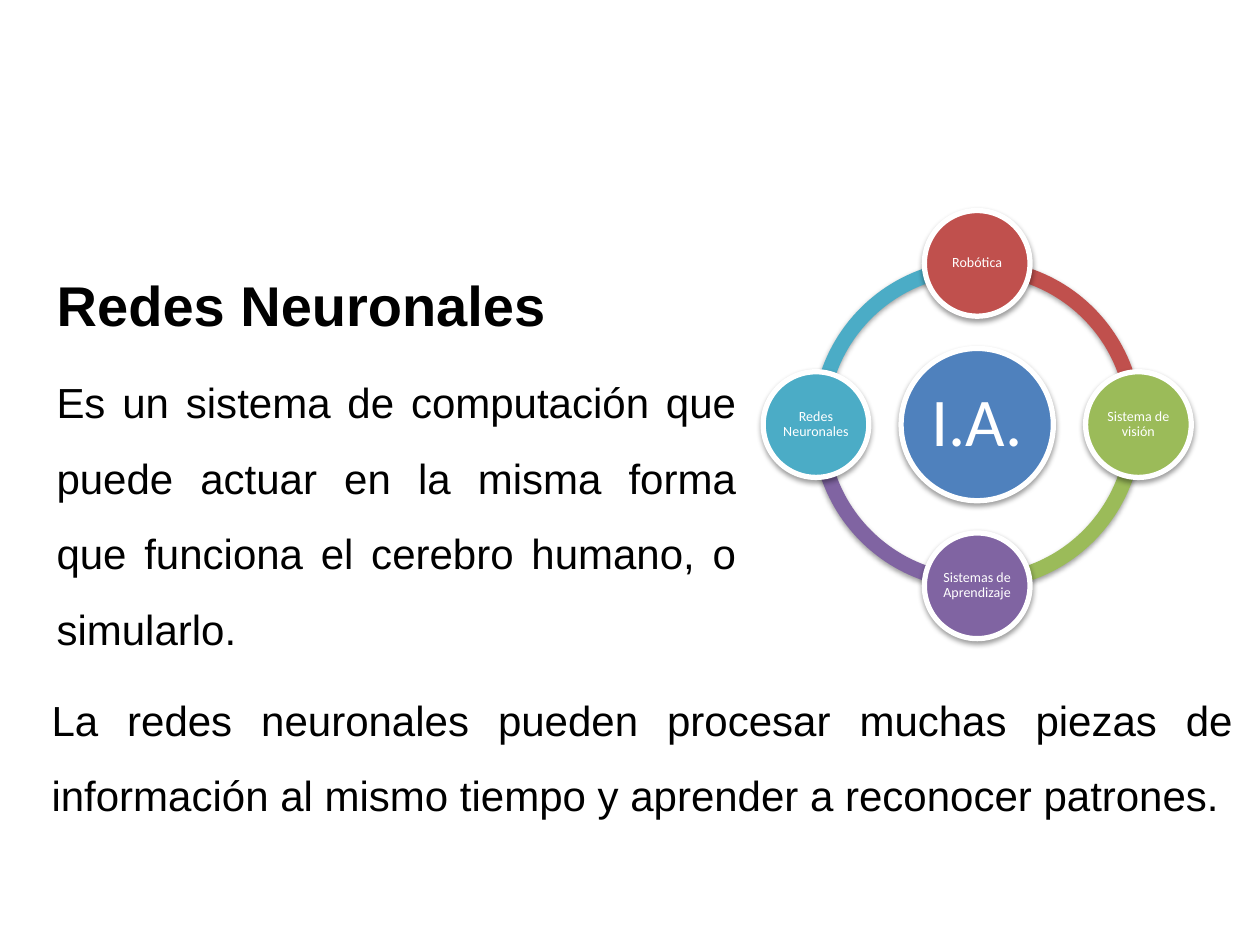
from math import cos, radians, sin

from lxml.etree import SubElement
from pptx import Presentation
from pptx.dml.color import RGBColor
from pptx.enum.shapes import MSO_SHAPE as Preset
from pptx.enum.text import MSO_ANCHOR as Anchor, MSO_AUTO_SIZE as AutoSize, PP_ALIGN as Align
from pptx.oxml.ns import qn
from pptx.util import Cm, Pt

COLOURS = {
    "black": "000000", "white": "FFFFFF", "blue": "4F81BD", "red": "C0504D",
    "green": "9BBB59", "purple": "8064A2", "teal": "4BACC6",
}

# Content
TITLE = "Redes Neuronales"
BODY = [  # text, (left, top, width, height) in cm
    ("Es un sistema de computación que puede actuar en la misma forma que "
     "funciona el cerebro humano, o simularlo.", (0.89, 6.96, 14.2, 6.22)),
    ("La redes neuronales pueden procesar muchas piezas de información al "
     "mismo tiempo y aprender a reconocer patrones.", (0.79, 13.36, 24.31, 3.15)),
]
HUB = "I.A."
BRANCHES = [  # clockwise from the top
    ("Robótica", "red"),
    ("Sistema de visión", "green"),
    ("Sistemas de Aprendizaje", "purple"),
    ("Redes Neuronales", "teal"),
]

# Wheel geometry in cm
CENTRE_X, CENTRE_Y = 19.7, 8.56
RING_SIZE, HUB_SIZE, BRANCH_SIZE = 6.65, 3.07, 2.13
ORBIT = 3.25
ARC_THICKNESS = 0.046
ANGLE_UNIT = 0.6  # adjustment value per degree


def rgb(name):
    return RGBColor.from_string(COLOURS[name])


def add_text(paragraph, text, size, font, colour, bold=False):
    run = paragraph.add_run()
    run.text = text
    run.font.size = Pt(size)
    run.font.name = font
    run.font.bold = bold
    run.font.color.rgb = rgb(colour)


def add_round(slide, preset, x, y, size, colour):
    """Add a filled shape centred on (x, y) with a soft shadow below it."""
    part = slide.shapes.add_shape(
        preset, Cm(x - size / 2), Cm(y - size / 2), Cm(size), Cm(size))
    part.fill.solid()
    part.fill.fore_color.rgb = rgb(colour)
    part.line.fill.background()
    part.shadow.inherit = False
    effects = part._element.spPr.find(qn("a:effectLst"))
    shadow = SubElement(effects, qn("a:outerShdw"), blurRad="40000",
                        dist="20000", dir="5400000", rotWithShape="0")
    tint = SubElement(shadow, qn("a:srgbClr"), val=COLOURS["black"])
    SubElement(tint, qn("a:alpha"), val="38000")
    return part


def add_node(slide, x, y, size, colour, label, font_size, inset):
    node = add_round(slide, Preset.OVAL, x, y, size, colour)
    node.line.color.rgb = rgb("white")
    node.line.width = Pt(3)
    frame = node.text_frame
    frame.word_wrap = True
    frame.vertical_anchor = Anchor.MIDDLE
    frame.margin_left = frame.margin_right = Cm(inset)
    frame.margin_top = frame.margin_bottom = Cm(inset)
    paragraph = frame.paragraphs[0]
    paragraph.alignment = Align.CENTER
    paragraph.line_spacing = 0.9
    add_text(paragraph, label, font_size, "Calibri", "white")


def main():
    deck = Presentation()
    deck.slide_width, deck.slide_height = Cm(25.4), Cm(19.05)
    slide = deck.slides.add_slide(deck.slide_layouts[5])

    # Title
    title = slide.shapes.title
    title.left, title.top, title.width, title.height = map(Cm, (0.89, 5.33, 12.6, 1.63))
    title.text_frame.vertical_anchor = Anchor.TOP
    title.text_frame.auto_size = AutoSize.NONE
    heading = title.text_frame.paragraphs[0]
    heading.alignment = Align.LEFT
    add_text(heading, TITLE, 32, "Arial", "black", bold=True)

    # Body paragraphs
    for text, place in BODY:
        frame = slide.shapes.add_textbox(*map(Cm, place)).text_frame
        frame.word_wrap = True
        paragraph = frame.paragraphs[0]
        paragraph.alignment = Align.JUSTIFY
        paragraph.line_spacing = 1.5
        add_text(paragraph, text, 24, "Arial", "black")

    # Ring: each quarter starts at its branch and runs clockwise
    angles = [(270 + i * 360 / len(BRANCHES)) % 360 for i in range(len(BRANCHES))]
    ends = angles[1:] + angles[:1]
    for (_, colour), start, end in reversed(list(zip(BRANCHES, angles, ends))):
        arc = add_round(slide, Preset.BLOCK_ARC, CENTRE_X, CENTRE_Y, RING_SIZE, colour)
        for i, value in enumerate((start * ANGLE_UNIT, end * ANGLE_UNIT, ARC_THICKNESS)):
            arc.adjustments[i] = value

    # Hub and branches
    add_node(slide, CENTRE_X, CENTRE_Y, HUB_SIZE, "blue", HUB, 39, 0.13)
    for (label, colour), angle in zip(BRANCHES, angles):
        x = CENTRE_X + ORBIT * cos(radians(angle))
        y = CENTRE_Y + ORBIT * sin(radians(angle))
        add_node(slide, x, y, BRANCH_SIZE, colour, label, 8, 0.03)

    deck.save("out.pptx")


if __name__ == "__main__":
    main()
